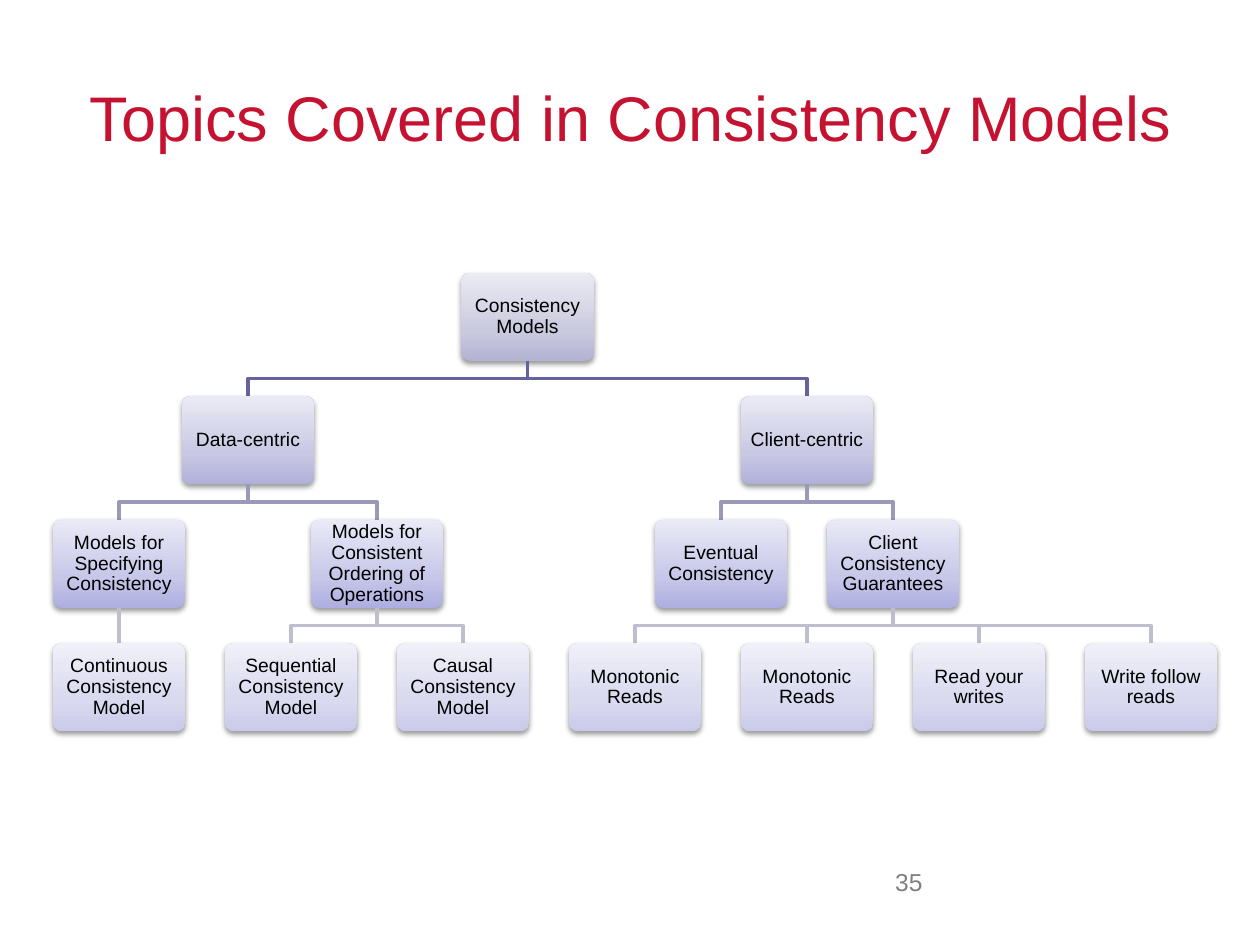
from lxml.etree import SubElement as Sub
from pptx import Presentation
from pptx.dml.color import RGBColor as Rgb
from pptx.enum.shapes import MSO_CONNECTOR as Conn, MSO_SHAPE as Kind
from pptx.enum.text import MSO_ANCHOR as Anchor, PP_ALIGN as Align
from pptx.oxml.ns import qn
from pptx.util import Inches as In, Pt

WIDE, HIGH = 10, 7.5
HUES = {
    "title": "C41230", "page": "808080", "text": "000000", "shade": "000000",
    "boxes": [("B3B3D3", "CACADF", "EBEBF3"), ("B0B0DA", "C8C8E4", "EAEAF5"),
              ("AEAEE1", "C7C7E9", "E9E9F7"), ("CACAEA", "D9D9EF", "F0F0F9")],
    "links": ["64649B", "9A9AB8", "BEBECF"],
}

# Tree grid: center of column 0, top of row 0, steps and box size
LEFT, TOP = 0.945, 2.165
COL, ROW = 1.365, 0.98
BOX_W, BOX_H = 1.05, 0.7

# Each node: text, children; leaves take the next free column
TREE = ("Consistency Models", [
    ("Data-centric", [
        ("Models for Specifying Consistency", [
            ("Continuous Consistency Model", [])]),
        ("Models for Consistent Ordering of Operations", [
            ("Sequential Consistency Model", []),
            ("Causal Consistency Model", [])]),
    ]),
    ("Client-centric", [
        ("Eventual Consistency", []),
        ("Client Consistency Guarantees", [
            ("Monotonic Reads", []), ("Monotonic Reads", []),
            ("Read your writes", []), ("Write follow reads", [])]),
    ]),
])
# Column of a childless node that sits above the leaf row
FIXED = {"Eventual Consistency": 3.5}
LAST = 3


def place(node, free, row=0):
    """Give each node a column: midway between its outer children."""
    text, kids = node
    kids = [place(kid, free, row + 1) for kid in kids]
    if kids:
        col = (kids[0][1] + kids[-1][1]) / 2
    elif row < LAST:
        col = FIXED[text]
    else:
        col = free.pop(0)
    return text, col, kids


def write(frame, text, size, hue, align):
    frame.word_wrap = True
    par = frame.paragraphs[0]
    par.alignment = align
    run = par.add_run()
    run.text = text
    run.font.name, run.font.size = "Arial", Pt(size)
    run.font.color.rgb = Rgb.from_string(hue)
    return par


def label(slide, area, text, size, hue, align, anchor):
    x, y, w, h = area
    box = slide.shapes.add_textbox(In(x * WIDE), In(y * HIGH),
                                   In(w * WIDE), In(h * HIGH))
    box.text_frame.vertical_anchor = anchor
    write(box.text_frame, text, size, hue, align)


def tint(box, hues):
    """Three-stop vertical gradient, darkest at the bottom."""
    box.fill.gradient()
    box.fill.gradient_angle = 90
    stops = box._element.spPr.find(".//" + qn("a:gsLst"))
    stops.clear()
    for pos, hue in zip((0, 35, 100), hues):
        stop = Sub(stops, qn("a:gs"), pos=str(pos * 1000))
        Sub(stop, qn("a:srgbClr"), val=hue)


def shade(box):
    """Soft shadow just below the box."""
    box.shadow.inherit = False
    effects = box._element.spPr.find(qn("a:effectLst"))
    drop = Sub(effects, qn("a:outerShdw"), blurRad=str(Pt(3.1)),
               dist=str(Pt(1.6)), dir="5400000", rotWithShape="0")
    hue = Sub(drop, qn("a:srgbClr"), val=HUES["shade"])
    Sub(hue, qn("a:alpha"), val="38000")


def spot(col, row):
    """Middle of a box's top edge."""
    return In(LEFT + col * COL), In(TOP + row * ROW)


def card(shapes, text, col, row):
    x, y = spot(col, row)
    box = shapes.add_shape(Kind.ROUNDED_RECTANGLE, x - In(BOX_W / 2), y,
                           In(BOX_W), In(BOX_H))
    box.adjustments[0] = 0.1
    tint(box, HUES["boxes"][row])
    box.line.fill.background()
    shade(box)
    frame = box.text_frame
    frame.margin_left = frame.margin_right = In(0.05)
    frame.margin_top = frame.margin_bottom = In(0.05)
    frame.vertical_anchor = Anchor.MIDDLE
    par = write(frame, text, 11, HUES["text"], Align.CENTER)
    par.line_spacing = 0.9


def link(shapes, col, kid, row):
    """Line from a box down to its child, bent when columns differ."""
    x, top = spot(col, row)
    y = top + In(BOX_H)
    end_x, end_y = spot(kid, row + 1)
    if col == kid:
        line = shapes.add_connector(Conn.STRAIGHT, x, y, end_x, end_y)
        Sub(line._element.spPr, qn("a:effectLst"))
    else:
        mid = (y + end_y) // 2
        path = shapes.build_freeform(x, y)
        path.add_line_segments([(x, mid), (end_x, mid), (end_x, end_y)],
                               close=False)
        line = path.convert_to_shape()
        line.fill.background()
        line.shadow.inherit = False
    line.line.color.rgb = Rgb.from_string(HUES["links"][row])
    line.line.width = Pt(2)


def draw(shapes, node, row=0):
    text, col, kids = node
    card(shapes, text, col, row)
    for kid in kids:
        link(shapes, col, kid[1], row)
        draw(shapes, kid, row + 1)


def main():
    deck = Presentation()
    deck.slide_width, deck.slide_height = In(WIDE), In(HIGH)
    slide = deck.slides.add_slide(deck.slide_layouts[6])

    # Title and page number
    label(slide, (0.017, 0.04, 0.967, 0.167),
          "Topics Covered in Consistency Models", 36, HUES["title"],
          Align.CENTER, Anchor.MIDDLE)
    label(slide, (0.65, 0.911, 0.092, 0.07), "35", 14, HUES["page"],
          Align.RIGHT, Anchor.TOP)

    # Topic tree
    group = slide.shapes.add_group_shape()
    draw(group.shapes, place(TREE, list(range(7))))
    deck.save("out.pptx")


if __name__ == "__main__":
    main()
